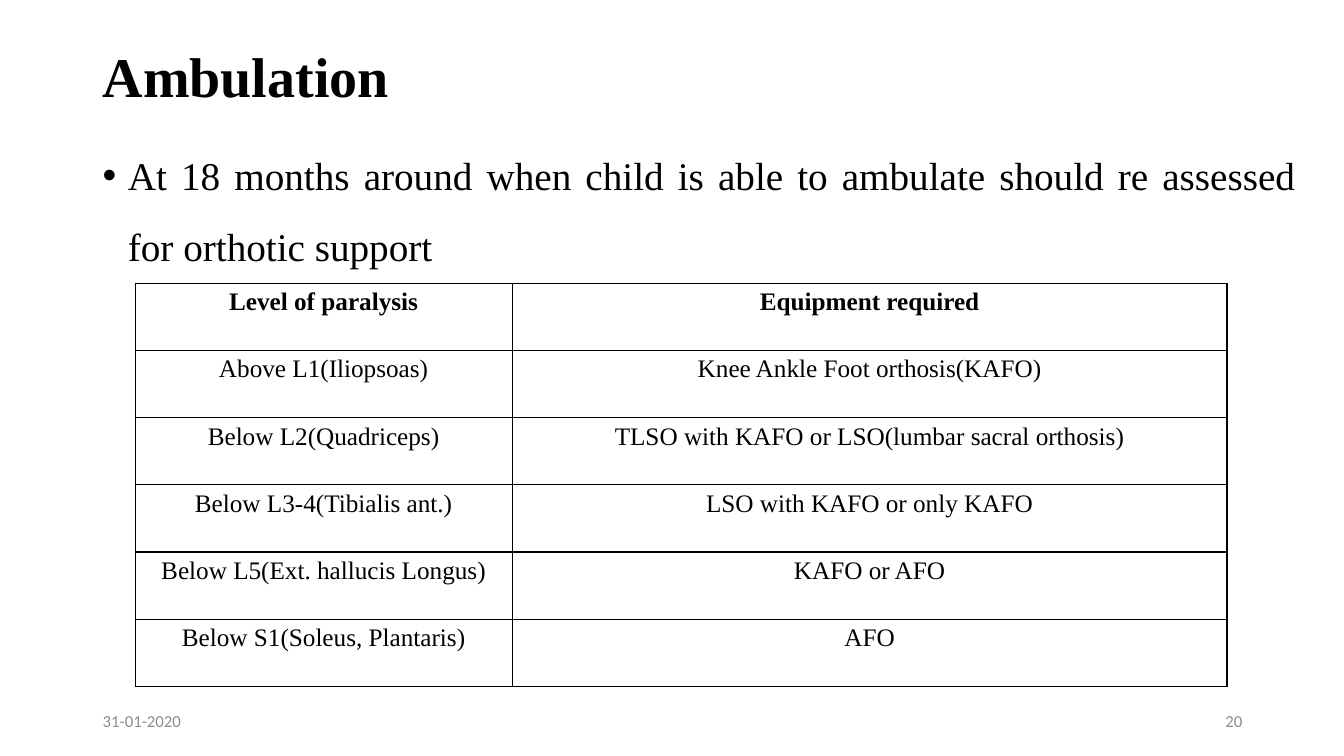
import pptx
import pptx.dml.color
import pptx.enum.text
import pptx.oxml.ns
import pptx.util
from lxml import etree

COLORS = {"ink": "000000", "muted": "8C8C8C", "paper": "FFFFFF"}
SERIF, SANS = "Times New Roman", "Calibri"
ALIGN = pptx.enum.text.PP_ALIGN
ANCHOR = pptx.enum.text.MSO_ANCHOR
WIDTH, HEIGHT = 13.33, 7.5
LEFT = 0.92

EQUIPMENT = [
    ("Level of paralysis", "Equipment required"),
    ("Above L1(Iliopsoas)", "Knee Ankle Foot orthosis(KAFO)"),
    ("Below L2(Quadriceps)", "TLSO with KAFO or LSO(lumbar sacral orthosis)"),
    ("Below L3-4(Tibialis ant.)", "LSO with KAFO or only KAFO"),
    ("Below L5(Ext. hallucis Longus)", "KAFO or AFO"),
    ("Below S1(Soleus, Plantaris)", "AFO"),
]


def rgb(name):
    return pptx.dml.color.RGBColor.from_string(COLORS[name])


def add_xml(parent, tag, **attributes):
    return etree.SubElement(parent, pptx.oxml.ns.qn(tag), attributes)


def write(para, text, size, font=SERIF, color="ink", bold=False, align=ALIGN.LEFT):
    para.alignment = align
    span = para.add_run()
    span.text = text
    span.font.size = pptx.util.Pt(size)
    span.font.name = font
    span.font.bold = bold
    span.font.color.rgb = rgb(color)


def add_box(page, box, anchor=ANCHOR.MIDDLE):
    """Add an empty wrapped text box and return its first paragraph."""
    frame = page.shapes.add_textbox(*map(pptx.util.Inches, box)).text_frame
    frame.word_wrap = True
    frame.vertical_anchor = anchor
    return frame.paragraphs[0]


def add_title(page, box):
    para = add_box(page, box)
    para.line_spacing = 0.9
    write(para, "Ambulation", 40, bold=True)


def add_body(page, box):
    para = add_box(page, box, ANCHOR.TOP)
    para.line_spacing = 1.5
    para.space_before = pptx.util.Pt(10)
    write(para, "At 18 months around when child is able to ambulate "
          "should re assessed for orthotic support", 28, align=ALIGN.JUSTIFY)
    # Hanging bullet
    indent = pptx.util.Inches(0.25)
    properties = para._p.get_or_add_pPr()
    properties.set("marL", str(indent))
    properties.set("indent", str(-indent))
    add_xml(properties, "a:buFont", typeface="Arial")
    add_xml(properties, "a:buChar", char="•")


def style_cell(cell):
    properties = cell._tc.get_or_add_tcPr()
    for side in ("a:lnL", "a:lnR", "a:lnT", "a:lnB"):
        line = add_xml(properties, side, w=str(pptx.util.Pt(1)))
        add_xml(add_xml(line, "a:solidFill"), "a:srgbClr", val=COLORS["ink"])
    cell.fill.solid()
    cell.fill.fore_color.rgb = rgb("paper")


def add_equipment_table(page, box, first_column):
    frame = page.shapes.add_table(len(EQUIPMENT), 2, *map(pptx.util.Inches, box))
    table = frame.table
    table.columns[0].width = pptx.util.Inches(first_column)
    table.columns[1].width = pptx.util.Inches(box[2] - first_column)
    for row, texts in enumerate(EQUIPMENT):
        for column, text in enumerate(texts):
            cell = table.cell(row, column)
            style_cell(cell)
            write(cell.text_frame.paragraphs[0], text, 18,
                  bold=row == 0, align=ALIGN.CENTER)


def add_footer(page, box):
    left, top, width, height = box
    part = 3
    write(add_box(page, (left, top, part, height)), "31-01-2020", 12, SANS, "muted")
    write(add_box(page, (left + width - part, top, part, height)), "20", 12,
          SANS, "muted", align=ALIGN.RIGHT)


def main():
    deck = pptx.Presentation()
    deck.slide_width = pptx.util.Inches(WIDTH)
    deck.slide_height = pptx.util.Inches(HEIGHT)
    page = deck.slides.add_slide(deck.slide_layouts[6])
    page.background.fill.solid()
    page.background.fill.fore_color.rgb = rgb("paper")

    add_title(page, (LEFT, 0.35, 8.9, 0.87))
    add_body(page, (LEFT, 1.22, 12.03, 5.73))
    add_footer(page, (LEFT, 6.95, 11.5, 0.4))
    add_equipment_table(page, (1.34, 2.81, 10.83, 4), 3.74)
    deck.save("out.pptx")


if __name__ == "__main__":
    main()
